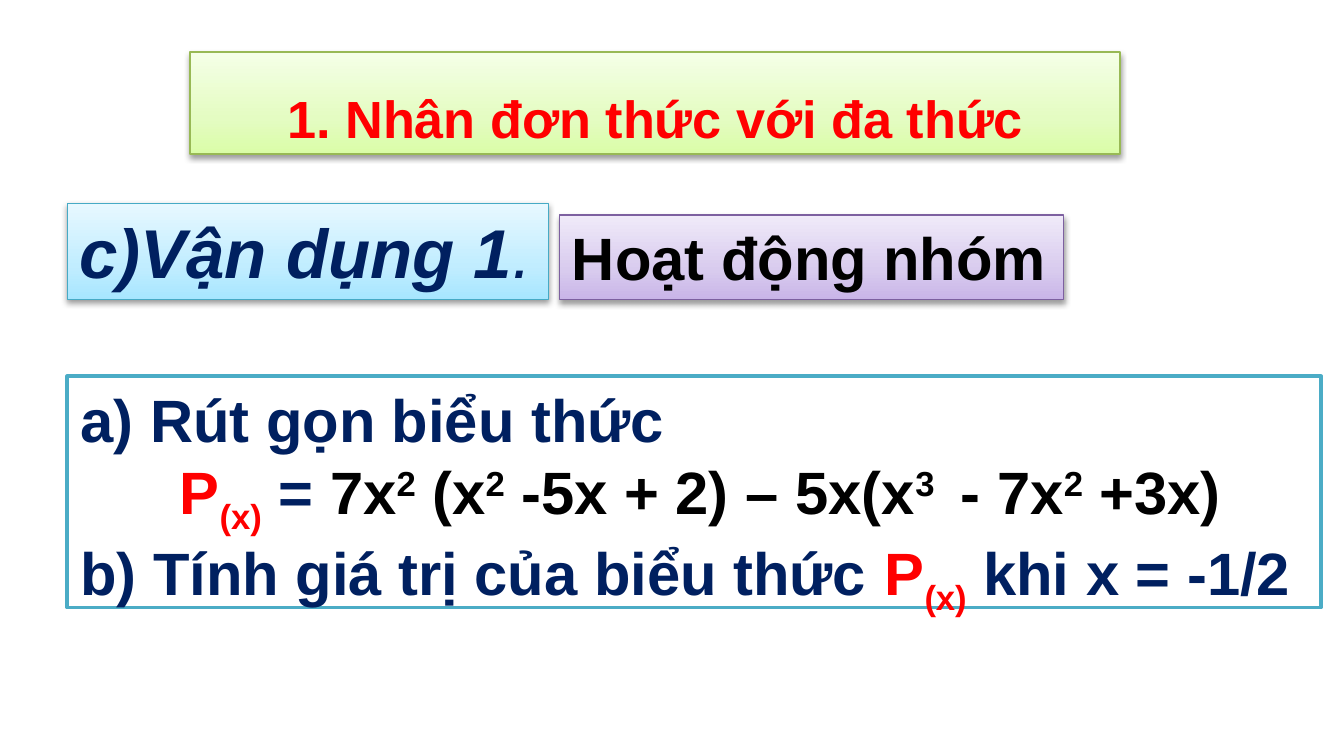
from copy import deepcopy
from pptx import Presentation
from pptx.dml.color import RGBColor as RGB
from pptx.enum.shapes import MSO_SHAPE as SHAPE
from pptx.enum.text import MSO_ANCHOR as ANCHOR, MSO_AUTO_SIZE as AUTO, PP_ALIGN as ALIGN
from pptx.oxml import parse_xml
from pptx.oxml.ns import nsdecls, qn
from pptx.util import Inches, Pt

NAVY, RED, BLACK = "002060", "FF0000", "000000"
SUB, SUP = -25, 30
SHADOW = (
    f'<a:outerShdw {nsdecls("a")} blurRad="40000" dist="20000" dir="5400000" rotWithShape="0">'
    '<a:srgbClr val="000000"><a:alpha val="38000"/></a:srgbClr></a:outerShdw>'
)


def rgb(value):
    return RGB.from_string(value)


def add_run(p, text, size, color, base=0, bold=True, italic=False):
    r = p.add_run()
    r.text = text
    r.font.name, r.font.size = "Arial", Pt(size)
    r.font.bold, r.font.italic = bold, italic
    r.font.color.rgb = rgb(color)
    if base:
        r._r.get_or_add_rPr().set("baseline", str(base * 1000))


prs = Presentation()
prs.slide_width = Inches(10)
prs.slide_height = prs.slide_width * 9 // 16
unit = prs.slide_width / 100
s = prs.slides.add_slide(prs.slide_layouts[5])

title = s.shapes.title
label, group, task = [s.shapes.add_shape(SHAPE.RECTANGLE, 0, 0, 0, 0) for _ in range(3)]

boxes = [
    (title, (14.15, 3.87, 69.2, 7.6), (0.05, 0.02), "98B955", 0.75),
    (label, (5, 15.15, 35.8, 7.13), (0.09, 0.04), "46AAC5", 0.75),
    (group, (41.65, 16, 37.5, 6.3), (0.09, 0.04), "7D60A0", 0.75),
    (task, (5, 28, 93.3, 17.2), (0.1, 0.05), "4BACC6", 2),
]
for sp, (x, y, w, h), (side, edge), line, width in boxes:
    sp.left, sp.top, sp.width, sp.height = [int(v * unit) for v in (x, y, w, h)]
    sp.line.color.rgb, sp.line.width = rgb(line), Pt(width)
    sp.shadow.inherit = False
    tf = sp.text_frame
    tf.word_wrap, tf.auto_size = True, AUTO.NONE
    tf.vertical_anchor = ANCHOR.TOP
    tf.margin_left = tf.margin_right = Inches(side)
    tf.margin_top = tf.margin_bottom = Inches(edge)
    tf.paragraphs[0].alignment = ALIGN.LEFT

gradients = [
    (title, ("DAFDA7", "E4FCC2", "F5FFE7")),
    (label, ("A7E6FF", "C1EDFF", "E7F8FF")),
    (group, ("C9B5E8", "D8CBEE", "F0EAF9")),
]
for sp, colors in gradients:
    sp.fill.gradient()
    sp.fill.gradient_angle = 90
    spPr = sp._element.spPr
    stops = spPr.find(".//" + qn("a:gsLst"))
    stops.append(deepcopy(stops[-1]))
    for stop, color, position in zip(sp.fill.gradient_stops, colors, (0, 0.35, 1)):
        stop.color.rgb, stop.position = rgb(color), position
    spPr.find(qn("a:effectLst")).append(parse_xml(SHADOW))

task.fill.solid()
task.fill.fore_color.rgb = rgb("FFFFFF")

p = title.text_frame.paragraphs[0]
p.alignment, p.line_spacing = ALIGN.CENTER, 1.5
add_run(p, "1. Nhân đơn thức với đa thức", 28, RED)

p = label.text_frame.paragraphs[0]
add_run(p, "c)Vận dụng 1", 37, NAVY, italic=True)
add_run(p, ".", 37, NAVY, bold=False, italic=True)

add_run(group.text_frame.paragraphs[0], "Hoạt động nhóm", 32, BLACK)

lines = [
    [(" Rút gọn biểu thức", NAVY, 0)],
    [("P", RED, 0), ("(x)", RED, SUB), (" = ", NAVY, 0), ("7x", BLACK, 0), ("2", BLACK, SUP),
     (" (x", BLACK, 0), ("2", BLACK, SUP), (" -5x + 2) – 5x(x", BLACK, 0), ("3 ", BLACK, SUP),
     (" - 7x", BLACK, 0), ("2", BLACK, SUP), (" +3x)", BLACK, 0)],
    [("b) Tính giá trị của biểu thức ", NAVY, 0), ("P", RED, 0), ("(x)", RED, SUB),
     (" khi x = -1/2", NAVY, 0)],
]
tf = task.text_frame
for i, (runs, margin, indent) in enumerate(zip(lines, (0.38, 0.74, 0), (-0.38, 0, 0))):
    p = tf.add_paragraph() if i else tf.paragraphs[0]
    p.alignment = ALIGN.LEFT
    pPr = p._p.get_or_add_pPr()
    pPr.set("marL", str(Inches(margin)))
    pPr.set("indent", str(Inches(indent)))
    if indent:
        pPr.append(parse_xml(f'<a:buAutoNum {nsdecls("a")} type="alphaLcParenR"/>'))
    for text, color, base in runs:
        add_run(p, text, 32, color, base)

prs.save("out.pptx")
